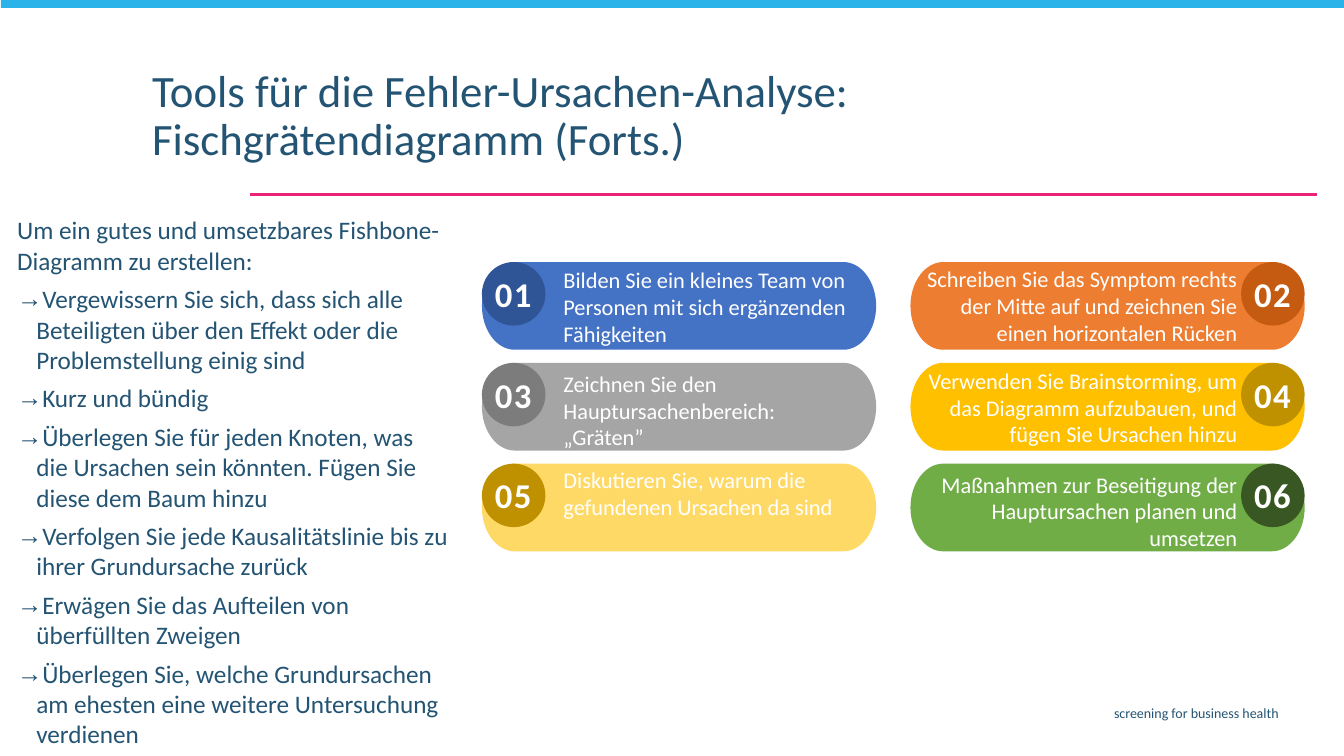
from lxml import etree
from pptx import Presentation, util as u
from pptx.dml.color import RGBColor
from pptx.enum import shapes, text
from pptx.oxml.ns import qn

# Content
TITLE = "Tools für die Fehler-Ursachen-Analyse: Fischgrätendiagramm (Forts.)"
FOOTER = "screening for business health"
INTRO = "Um ein gutes und umsetzbares Fishbone-Diagramm zu erstellen:"
TIPS = [
    "Vergewissern Sie sich, dass sich alle Beteiligten über den Effekt oder die Problemstellung einig sind",
    "Kurz und bündig",
    "Überlegen Sie für jeden Knoten, was die Ursachen sein könnten. Fügen Sie diese dem Baum hinzu",
    "Verfolgen Sie jede Kausalitätslinie bis zu ihrer Grundursache zurück",
    "Erwägen Sie das Aufteilen von überfüllten Zweigen",
    "Überlegen Sie, welche Grundursachen am ehesten eine weitere Untersuchung verdienen",
]
# Step text, pill colour, badge colour, text offset from the row top
STEPS = [
    ("Bilden Sie ein kleines Team von Personen mit sich ergänzenden Fähigkeiten", "4472C4", "2F5597", -0.01),
    ("Schreiben Sie das Symptom rechts der Mitte auf und zeichnen Sie einen horizontalen Rücken", "ED7D31", "C55A11", -0.02),
    ("Zeichnen Sie den Hauptursachenbereich: „Gräten”", "A5A5A5", "7C7C7C", 0.02),
    ("Verwenden Sie Brainstorming, um das Diagramm aufzubauen, und fügen Sie Ursachen hinzu", "FFC000", "BF9000", -0.01),
    ("Diskutieren Sie, warum die gefundenen Ursachen da sind", "FFD966", "BF9000", -0.02),
    ("Maßnahmen zur Beseitigung der Hauptursachen planen und umsetzen", "70AD47", "385723", 0.02),
]
NAVY, WHITE, PINK, SKY = "245473", "FFFFFF", "EC2179", "29B3E8"

# Grid of steps, in inches
COLUMNS, ROW_TOP, ROW_PITCH = (4.78, 9.03), 2.6, 1.0
PILL_W, PILL_H, CAP = 3.91, 0.87, 0.325
BADGE = 0.63
LEFT, RIGHT, CENTER = text.PP_ALIGN.LEFT, text.PP_ALIGN.RIGHT, text.PP_ALIGN.CENTER

deck = Presentation()
deck.slide_width, deck.slide_height = u.Inches(13.33), u.Inches(7.5)
slide = deck.slides.add_slide(deck.slide_layouts[6])


def color(value):
    return RGBColor.from_string(value)


def paint(shape, fill):
    shape.shadow.inherit = False
    shape.fill.solid()
    shape.fill.fore_color.rgb = color(fill)
    shape.line.fill.background()


def preset(kind, box, fill):
    paint(slide.shapes.add_shape(kind, *map(u.Inches, box)), fill)


def write(paragraph, words, size, ink, align=LEFT):
    paragraph.alignment = align
    run = paragraph.add_run()
    run.text = words
    run.font.size, run.font.name = u.Pt(size), "Calibri"
    run.font.color.rgb = color(ink)
    return run


def frame(box, grow=True):
    area = slide.shapes.add_textbox(*map(u.Inches, box)).text_frame
    area.word_wrap = True
    if grow:
        area.auto_size = text.MSO_AUTO_SIZE.SHAPE_TO_FIT_TEXT
    return area


def pill(left, top, fill):
    """Bar whose ends are half ellipses, drawn as six curves."""
    middle, half = top + PILL_H / 2, PILL_H / 2
    near, far = left + CAP, left + PILL_W - CAP
    bend_x, bend_y = 0.55 * CAP, 0.55 * half

    def end(x, side, turn):
        """Two quarter arcs; turn is 1 for downward first."""
        tip, first, last = x + side * CAP, middle + turn * half, middle - turn * half
        return [
            (x + side * bend_x, last), (tip, middle - turn * bend_y), (tip, middle),
            (tip, middle + turn * bend_y), (x + side * bend_x, first), (x, first),
        ]

    top_edge, bottom_edge = [(far, top)] * 3, [(near, top + PILL_H)] * 3
    outline = top_edge + end(far, 1, 1) + bottom_edge + end(near, -1, -1)
    emu = [(u.Inches(x), u.Inches(y)) for x, y in outline]
    builder = slide.shapes.build_freeform(u.Inches(near), u.Inches(top))
    builder.add_line_segments(emu, close=True)
    bar = builder.convert_to_shape()
    lines = list(bar._element.iter(qn("a:lnTo")))
    for first, second, third in zip(lines[::3], lines[1::3], lines[2::3]):
        first.tag = qn("a:cubicBezTo")
        for line in (second, third):
            first.append(line[0])
            line.getparent().remove(line)
    paint(bar, fill)


def step(index, words, fill, badge_fill, offset):
    row, column = divmod(index, 2)
    left, top = COLUMNS[column], ROW_TOP + row * ROW_PITCH
    badge_left = left + column * (PILL_W - BADGE)
    pill(left, top, fill)
    preset(shapes.MSO_SHAPE.OVAL, (badge_left, top, BADGE, BADGE), badge_fill)

    text_left, text_width = ((left + 0.71, 3.13), (left - 0.13, 3.47))[column]
    area = frame((text_left, top + offset, text_width, 0.91))
    write(area.paragraphs[0], words, 16, WHITE, (LEFT, RIGHT)[column])

    number = frame((badge_left + 0.12, top + 0.1, 0.38, 0.42))
    number.word_wrap = False
    number.vertical_anchor = text.MSO_ANCHOR.MIDDLE
    number.margin_left = number.margin_right = number.margin_top = number.margin_bottom = 0
    digits = write(number.paragraphs[0], f"{index + 1:02}", 24.8, WHITE, CENTER)
    digits.font.bold = True
    digits.font._element.set("spc", "110")


# Top band, rule and footer
preset(shapes.MSO_SHAPE.RECTANGLE, (0.01, -0.02, 13.34, 0.1), SKY)
rule = slide.shapes.add_connector(
    shapes.MSO_CONNECTOR.STRAIGHT, *map(u.Inches, (13.06, 1.93, 2.48, 1.93)))
rule.line.color.rgb, rule.line.width = color(PINK), u.Pt(1.5)
etree.SubElement(rule._element.spPr, qn("a:effectLst"))
write(frame((3.65, 6.94, 9.13, 0.29), grow=False).paragraphs[0], FOOTER, 10, NAVY, RIGHT)

# Title
heading = frame((1.41, 0.63, 7.26, 0.76), grow=False).paragraphs[0]
heading.line_spacing = 0.9
write(heading, TITLE, 32, NAVY)

# Advice list
advice = frame((0.08, 2.09, 4.48, 5.83))
advice.margin_left = advice.margin_right = u.Inches(0.09)
advice.margin_top = advice.margin_bottom = u.Inches(0.04)
write(advice.paragraphs[0], INTRO, 18, NAVY)
for tip in TIPS:
    item = advice.add_paragraph()
    item.space_before = u.Pt(6)
    properties = item._p.get_or_add_pPr()
    properties.set("marL", str(u.Inches(0.19)))
    properties.set("indent", str(-u.Inches(0.19)))
    etree.SubElement(properties, qn("a:buFont")).set("typeface", "Arial")
    etree.SubElement(properties, qn("a:buChar")).set("char", "→")
    write(item, tip, 18, NAVY)

# Numbered steps
for index, details in enumerate(STEPS):
    step(index, *details)

deck.save("out.pptx")
